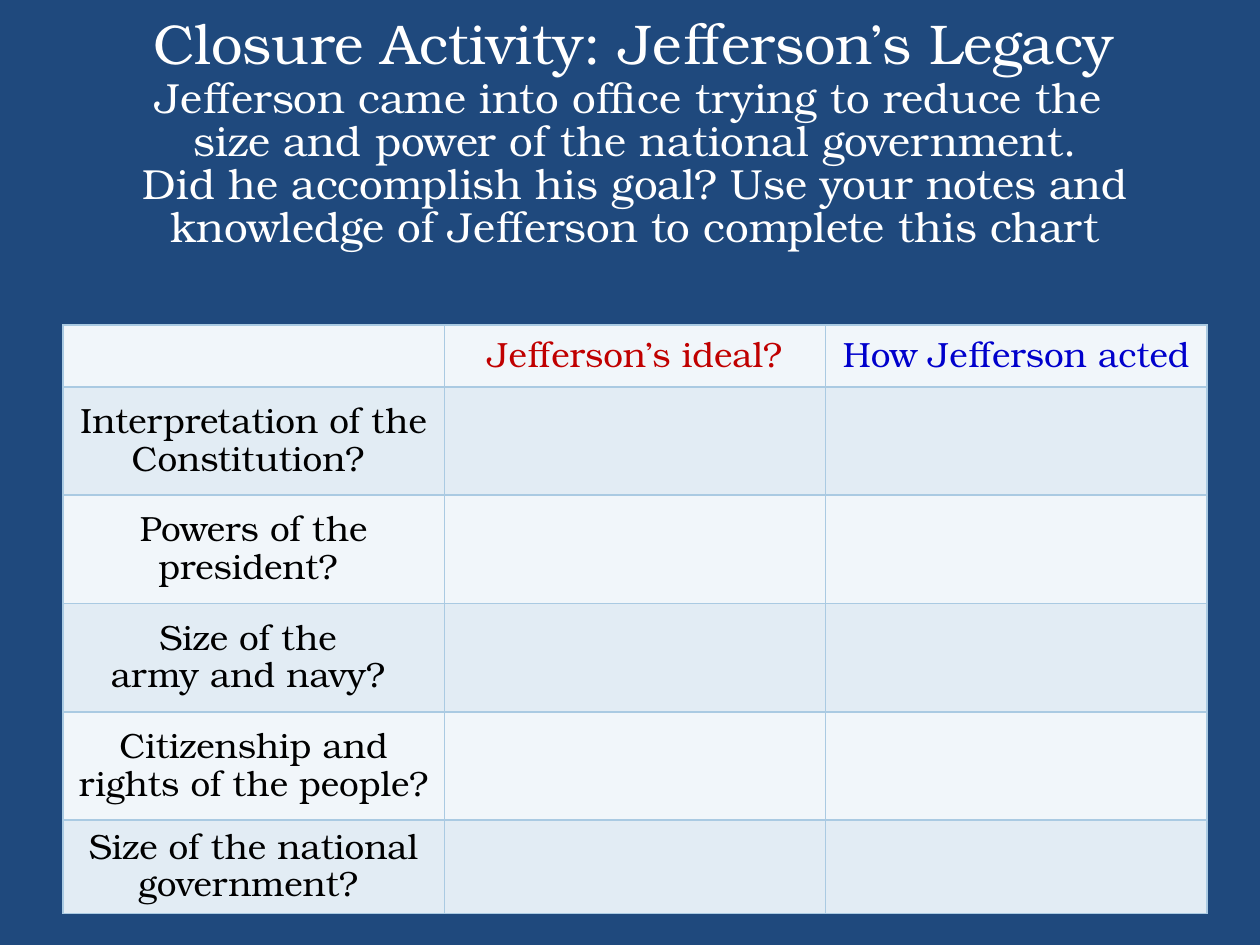
import dataclasses

import lxml.etree
import pptx
import pptx.dml.color
import pptx.enum.text
import pptx.oxml.ns
import pptx.util

Inches = pptx.util.Inches
Pt = pptx.util.Pt


@dataclasses.dataclass(frozen=True)
class Theme:
    font: str = "TeX Gyre Bonum"
    background: str = "1F497D"
    light_text: str = "FFFFFF"
    label_text: str = "000000"
    ideal_text: str = "C00000"
    action_text: str = "0000CC"
    bands: tuple = ("F1F6FA", "E2ECF4")
    border: str = "AACAE2"
    title_size: int = 32
    prompt_size: int = 24
    table_size: int = 20


THEME = Theme()

TITLE = "Closure Activity: Jefferson’s Legacy"
PROMPT = [
    "Jefferson came into office trying to reduce the \vsize and power of the national government.",
    "Did he accomplish his goal? Use your notes and knowledge of Jefferson to complete this chart",
]
HEADINGS = [
    ("Jefferson’s ideal?", THEME.ideal_text),
    ("How Jefferson acted", THEME.action_text),
]
TOPICS = [
    "Interpretation of the Constitution? ",
    "Powers of the president? ",
    "Size of the \varmy and navy? ",
    "Citizenship and rights of the people? ",
    "Size of the national government? ",
]
ROW_HEIGHTS = [0.49, 0.86, 0.86, 0.86, 0.86, 0.74]


def rgb(value):
    return pptx.dml.color.RGBColor.from_string(value)


def write_paragraphs(text_frame, texts, size, color, line_spacing):
    for index, text in enumerate(texts):
        paragraph = text_frame.paragraphs[0] if index == 0 else text_frame.add_paragraph()
        paragraph.text = text
        paragraph.alignment = pptx.enum.text.PP_ALIGN.CENTER
        paragraph.line_spacing = line_spacing
        paragraph.font.name = THEME.font
        paragraph.font.size = Pt(size)
        paragraph.font.color.rgb = rgb(color)


def add_text(slide, box, texts, size, anchor, line_spacing=1.0):
    shape = slide.shapes.add_textbox(*(Inches(length) for length in box))
    text_frame = shape.text_frame
    text_frame.word_wrap = True
    text_frame.vertical_anchor = anchor
    write_paragraphs(text_frame, texts, size, THEME.light_text, line_spacing)


def set_borders(cell):
    """Draw a one-point line on all four sides; lines must precede the fill in the XML."""
    properties = cell._tc.get_or_add_tcPr()
    for position, side in enumerate(("lnL", "lnR", "lnT", "lnB")):
        line = lxml.etree.Element(pptx.oxml.ns.qn(f"a:{side}"), w=str(Pt(1)))
        fill = lxml.etree.SubElement(line, pptx.oxml.ns.qn("a:solidFill"))
        lxml.etree.SubElement(fill, pptx.oxml.ns.qn("a:srgbClr"), val=THEME.border)
        properties.insert(position, line)


def write_cell(cell, text, color):
    cell.vertical_anchor = pptx.enum.text.MSO_ANCHOR.MIDDLE
    write_paragraphs(cell.text_frame, [text], THEME.table_size, color, 0.8)


def add_comparison_table(slide, left, top, width):
    column_count = len(HEADINGS) + 1
    table = slide.shapes.add_table(
        len(TOPICS) + 1, column_count,
        Inches(left), Inches(top), Inches(width), Inches(sum(ROW_HEIGHTS)),
    ).table
    for column in table.columns:
        column.width = Inches(width / column_count)
    for index, height in enumerate(ROW_HEIGHTS):
        table.rows[index].height = Inches(height)
        for cell in table.rows[index].cells:
            cell.fill.solid()
            cell.fill.fore_color.rgb = rgb(THEME.bands[index % 2])
            set_borders(cell)
    for index, (heading, color) in enumerate(HEADINGS, start=1):
        write_cell(table.cell(0, index), heading, color)
    for index, topic in enumerate(TOPICS, start=1):
        write_cell(table.cell(index, 0), topic, THEME.label_text)


def main():
    presentation = pptx.Presentation()
    presentation.slide_width = Inches(10)
    presentation.slide_height = Inches(7.5)
    slide = presentation.slides.add_slide(presentation.slide_layouts[6])
    slide.background.fill.solid()
    slide.background.fill.fore_color.rgb = rgb(THEME.background)

    anchors = pptx.enum.text.MSO_ANCHOR
    add_text(slide, (0.31, 0, 9.44, 0.67), [TITLE], THEME.title_size, anchors.MIDDLE)
    add_text(slide, (0.5, 0.58, 9.08, 1.48), PROMPT, THEME.prompt_size, anchors.TOP, 0.85)
    add_comparison_table(slide, left=0.5, top=2.58, width=9.08)
    presentation.save("out.pptx")


if __name__ == "__main__":
    main()
